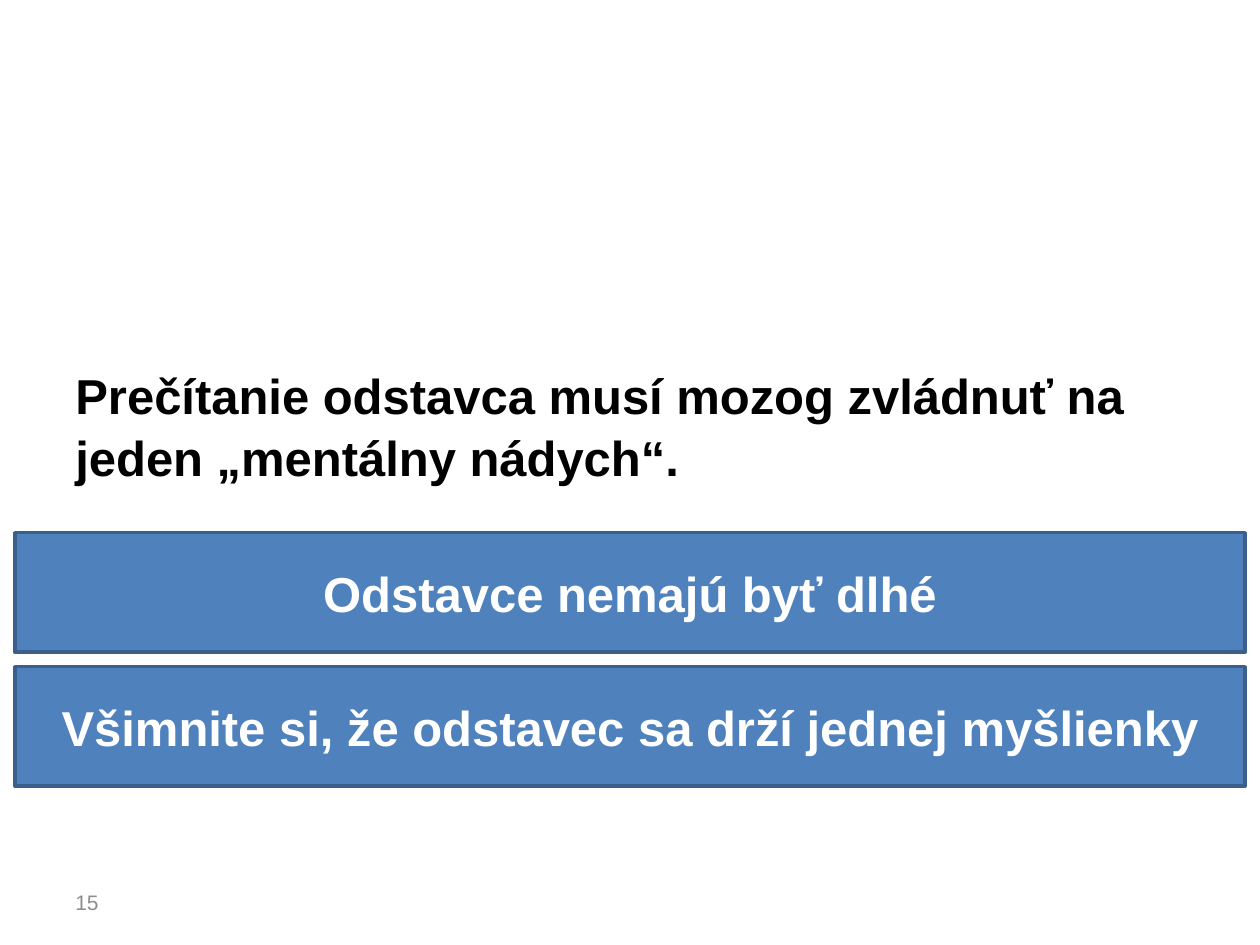
from dataclasses import dataclass

import pptx
import pptx.dml.color
import pptx.enum.shapes
import pptx.enum.text
import pptx.util
from pptx.dml.color import RGBColor
from pptx.util import Cm

BLACK = RGBColor(0x00, 0x00, 0x00)
WHITE = RGBColor(0xFF, 0xFF, 0xFF)
GREY = RGBColor(0x8C, 0x8C, 0x8C)
BLUE = RGBColor(0x4F, 0x81, 0xBD)
DARK_BLUE = RGBColor(0x3A, 0x5F, 0x8C)

MARGIN = 1.27
BANNER_LEFT, BANNER_TOP = 0.3, 10.74
BANNER_WIDTH, BANNER_HEIGHT = 24.8, 2.41
BANNER_PITCH = 2.7


@dataclass
class Label:
    text: str
    size: int
    color: RGBColor
    bold: bool = True
    align: pptx.enum.text.PP_ALIGN = pptx.enum.text.PP_ALIGN.LEFT
    line_spacing: float = 1.0


def write(shape, label: Label) -> None:
    """Put one formatted paragraph, vertically centred, in a shape."""
    frame = shape.text_frame
    frame.word_wrap = True
    frame.vertical_anchor = pptx.enum.text.MSO_ANCHOR.MIDDLE
    frame.text = label.text
    paragraph = frame.paragraphs[0]
    paragraph.alignment = label.align
    paragraph.line_spacing = label.line_spacing
    font = paragraph.runs[0].font
    font.name = "Arial"
    font.size = pptx.util.Pt(label.size)
    font.bold = label.bold
    font.color.rgb = label.color


def add_text(slide, top: float, width: float, height: float, label: Label) -> None:
    box = slide.shapes.add_textbox(Cm(MARGIN), Cm(top), Cm(width), Cm(height))
    write(box, label)


def add_banner(slide, row: int, text: str) -> None:
    banner = slide.shapes.add_shape(
        pptx.enum.shapes.MSO_SHAPE.RECTANGLE,
        Cm(BANNER_LEFT), Cm(BANNER_TOP + row * BANNER_PITCH),
        Cm(BANNER_WIDTH), Cm(BANNER_HEIGHT))
    banner.shadow.inherit = False
    banner.fill.solid()
    banner.fill.fore_color.rgb = BLUE
    banner.line.color.rgb = DARK_BLUE
    banner.line.width = pptx.util.Pt(2)
    write(banner, Label(text, 28, WHITE, align=pptx.enum.text.PP_ALIGN.CENTER))


def main() -> None:
    deck = pptx.Presentation()
    deck.slide_width, deck.slide_height = Cm(25.4), Cm(19.05)
    slide = deck.slides.add_slide(deck.slide_layouts[6])

    # Main statement
    add_text(slide, 6.96, 22.86, 3.18, Label(
        "Prečítanie odstavca musí mozog zvládnuť na jeden „mentálny nádych“.",
        28, BLACK, line_spacing=1.05))

    # Advice banners
    advice = ["Odstavce nemajú byť dlhé",
              "Všimnite si, že odstavec sa drží jednej myšlienky"]
    for row, text in enumerate(advice):
        add_banner(slide, row, text)

    # Page number
    add_text(slide, 17.68, 5.92, 1.02, Label("15", 12, GREY, bold=False))

    deck.save("out.pptx")


if __name__ == "__main__":
    main()
